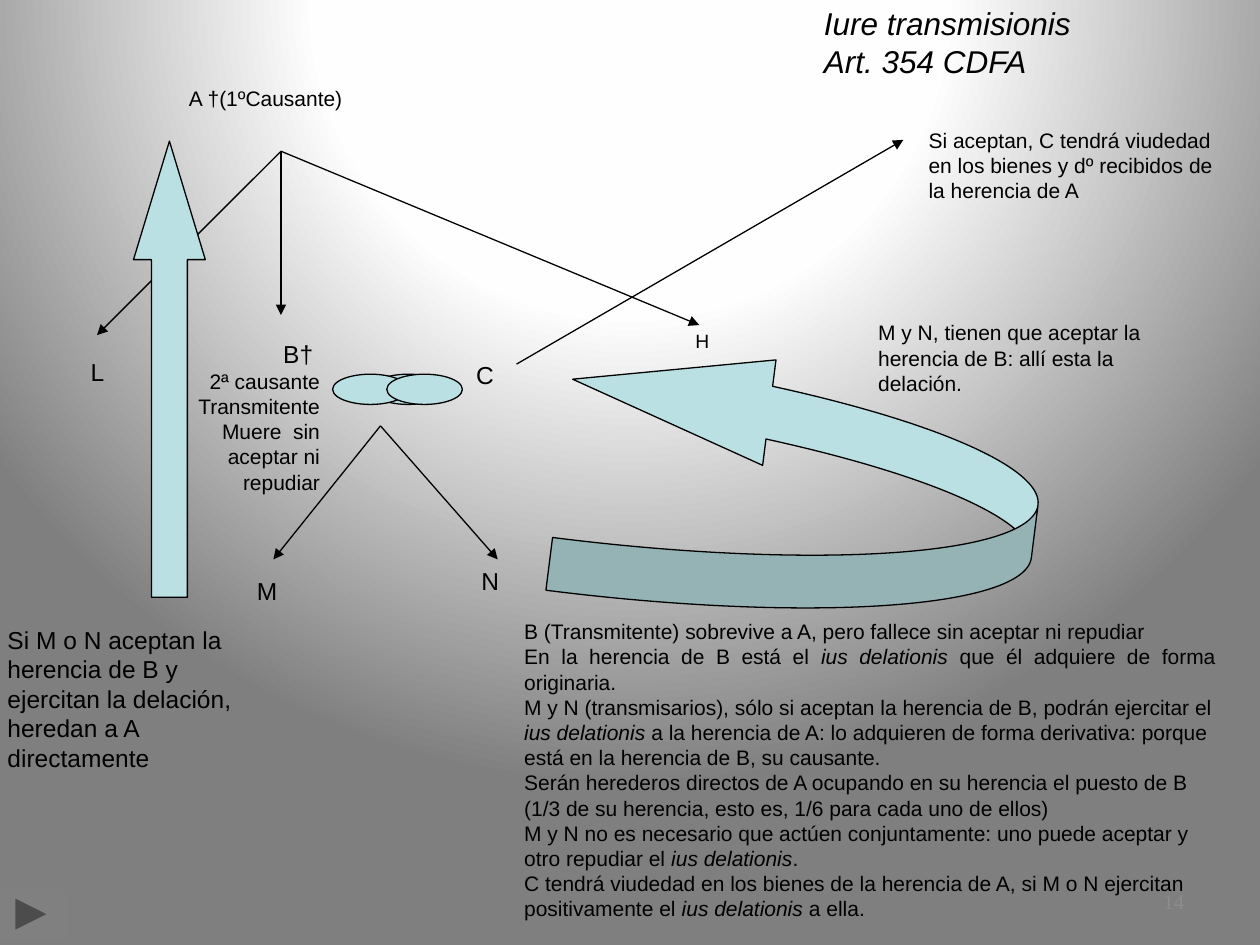
import pptx
import pptx.util
import pptx.dml.color
import pptx.enum.shapes
import pptx.enum.text
import pptx.oxml
import pptx.oxml.ns
from dataclasses import dataclass

Inches = pptx.util.Inches
SHAPE = pptx.enum.shapes.MSO_SHAPE
ALIGN = pptx.enum.text.PP_ALIGN
ANCHOR = pptx.enum.text.MSO_ANCHOR


@dataclass(frozen=True)
class Theme:
    ink: str = "000000"
    faint: str = "8C8C8C"
    aqua: str = "BBE0E3"
    button: str = "808080"
    backdrop: tuple = ((0, "FFFFFF"), (40, "FEFEFE"), (100, "7F7F7F"))
    font: str = "Arial"
    number_font: str = "Times New Roman"
    title: int = 18
    large: int = 14
    body: int = 12
    small: int = 11
    hairline: float = 0.75
    button_line: float = 2


THEME = Theme()

page_number = ["14"]

people = [
    ((0.66, 2.8, 0.37, 0.41), "L", THEME.large),
    ((5.46, 2.58, 0.41, 0.41), "H", THEME.small),
    ((3.72, 2.83, 0.73, 0.57), "C", THEME.large),
    ((1.98, 4.54, 0.44, 0.41), "M", THEME.large),
    ((3.76, 4.46, 0.41, 0.41), "N", THEME.large),
]

title = ["*Iure transmisionis*", "*Art. 354 CDFA*"]
first_deceased = ["A †(1ºCausante)"]
transmitter = ["B† ", "2ª causante", "Transmitente", "Muere  sin aceptar ni repudiar"]
widowhood = ["Si aceptan, C tendrá viudedad", "en los bienes y dº recibidos de", "la herencia de A"]
acceptance = ["M y N, tienen que aceptar la herencia de B: allí esta la delación."]
outcome = ["Si M o N aceptan la herencia de B y ejercitan la delación, heredan a A directamente"]
explanation = [
    "B (Transmitente) sobrevive a A, pero fallece sin aceptar ni repudiar",
    "En la herencia de B está el *ius delationis* que él adquiere de forma originaria.",
    "M y N (transmisarios), sólo si aceptan la herencia de B, podrán ejercitar el *ius delationis* "
    "a la herencia de A: lo adquieren de forma derivativa: porque está en la herencia de B, su causante.",
    "Serán herederos directos de A ocupando en su herencia el puesto de B "
    "(1/3 de su herencia, esto es, 1/6 para cada uno de ellos)",
    "M y N no es necesario que actúen conjuntamente: uno puede aceptar y otro repudiar el *ius delationis*.",
    "C tendrá viudedad en los bienes de la herencia de A, si M o N ejercitan positivamente "
    "el *ius delationis* a ella.",
]

descents = {
    (2.23, 1.2): [(5.55, 2.58), (2.23, 2.5), (0.77, 2.66)],
    (3.02, 3.38): [(2.17, 4.44), (3.95, 4.44)],
    (4.1, 2.89): [(7.17, 1.11)],
}
marriage_lefts = [2.94, 2.64, 3.07]


def rgb(color):
    return pptx.dml.color.RGBColor.from_string(color)


def add_text(slide, place, paragraphs, size=THEME.body, first_size=None, font=THEME.font, color=THEME.ink,
             align=None, aligns=None, anchor=ANCHOR.TOP, wrap=True, grow=False):
    frame = slide.shapes.add_textbox(*map(Inches, place)).text_frame
    frame.word_wrap = wrap
    frame.vertical_anchor = anchor
    frame.margin_left = frame.margin_right = Inches(0.06)
    frame.margin_top = frame.margin_bottom = Inches(0.03)
    if grow:
        frame.auto_size = pptx.enum.text.MSO_AUTO_SIZE.SHAPE_TO_FIT_TEXT
    for row, wording in enumerate(paragraphs):
        paragraph = frame.add_paragraph() if row else frame.paragraphs[0]
        paragraph.alignment = (aligns or {}).get(row, align)
        for part, piece in enumerate(wording.split("*")):
            if piece:
                run = paragraph.add_run()
                run.text = piece
                run.font.name = font
                run.font.size = pptx.util.Pt(first_size if first_size and row == 0 else size)
                run.font.italic = part % 2 == 1
                run.font.color.rgb = rgb(color)


def add_figure(slide, preset, place, fill=THEME.aqua, line=THEME.ink, width=THEME.hairline,
               adjustments=(), rotation=0):
    figure = slide.shapes.add_shape(preset, *map(Inches, place))
    figure.shadow.inherit = False
    figure.fill.solid()
    figure.fill.fore_color.rgb = rgb(fill)
    figure.line.color.rgb = rgb(line)
    figure.line.width = pptx.util.Pt(width)
    figure.rotation = rotation
    for index, value in enumerate(adjustments):
        figure.adjustments[index] = value


def add_arrow(slide, start, end):
    arrow = slide.shapes.add_connector(pptx.enum.shapes.MSO_CONNECTOR.STRAIGHT, *map(Inches, start + end))
    arrow.line.color.rgb = rgb(THEME.ink)
    arrow.line.width = pptx.util.Pt(THEME.hairline)
    head = pptx.oxml.parse_xml(f'<a:tailEnd {pptx.oxml.ns.nsdecls("a")} type="triangle"/>')
    properties = arrow.element.spPr
    properties.find(pptx.oxml.ns.qn("a:ln")).append(head)
    properties.append(pptx.oxml.parse_xml(f'<a:effectLst {pptx.oxml.ns.nsdecls("a")}/>'))


def set_backdrop(slide):
    slide.background.fill.gradient()
    stops = "".join(f'<a:gs pos="{position * 1000}"><a:srgbClr val="{color}"/></a:gs>'
                    for position, color in THEME.backdrop)
    gradient = pptx.oxml.parse_xml(
        f'<a:gradFill {pptx.oxml.ns.nsdecls("a")} rotWithShape="1"><a:gsLst>{stops}</a:gsLst>'
        '<a:path path="circle"><a:fillToRect l="50000" t="-80000" r="50000" b="180000"/></a:path></a:gradFill>')
    default = slide.element.find(".//" + pptx.oxml.ns.qn("a:gradFill"))
    default.getparent().replace(default, gradient)


def main():
    deck = pptx.Presentation()
    deck.slide_width, deck.slide_height = Inches(10), Inches(7.5)
    slide = deck.slides.add_slide(deck.slide_layouts[6])
    set_backdrop(slide)

    add_text(slide, (7.13, 6.95, 2.33, 0.4), page_number, font=THEME.number_font, color=THEME.faint,
             align=ALIGN.RIGHT, anchor=ANCHOR.MIDDLE)
    for start, ends in descents.items():
        for end in ends:
            add_arrow(slide, start, end)
    for left in marriage_lefts:
        add_figure(slide, SHAPE.OVAL, (left, 2.97, 0.6, 0.24))
    add_figure(slide, SHAPE.CURVED_UP_ARROW, (5.29, 1.98, 2.11, 3.79),
               adjustments=(0.2, 0.4, 0.75), rotation=277.2)
    add_figure(slide, SHAPE.UP_ARROW, (1.06, 1.12, 0.57, 3.62), adjustments=(0.5, 1.65))

    for place, person, size in people:
        add_text(slide, place, [person], size=size)
    add_text(slide, (1.44, 0.65, 1.36, 0.27), first_deceased, wrap=False, grow=True)
    add_text(slide, (1.47, 2.66, 1.13, 1.18), transmitter, first_size=THEME.large, align=ALIGN.RIGHT)
    add_text(slide, (6.48, 0, 2.77, 0.97), title, size=THEME.title, grow=True)
    add_text(slide, (7.31, 0.98, 2.45, 0.67), widowhood, wrap=False, grow=True)
    add_text(slide, (6.91, 2.51, 2.55, 0.76), acceptance)
    add_text(slide, (0, 4.93, 2.23, 0.93), outcome, size=THEME.large)
    add_text(slide, (4.1, 4.88, 5.61, 2.49), explanation, aligns={1: ALIGN.JUSTIFY}, grow=True)
    add_figure(slide, SHAPE.ACTION_BUTTON_FORWARD_OR_NEXT, (0, 7.06, 0.51, 0.39),
               fill=THEME.button, line=THEME.button, width=THEME.button_line)
    deck.save("out.pptx")


if __name__ == "__main__":
    main()
